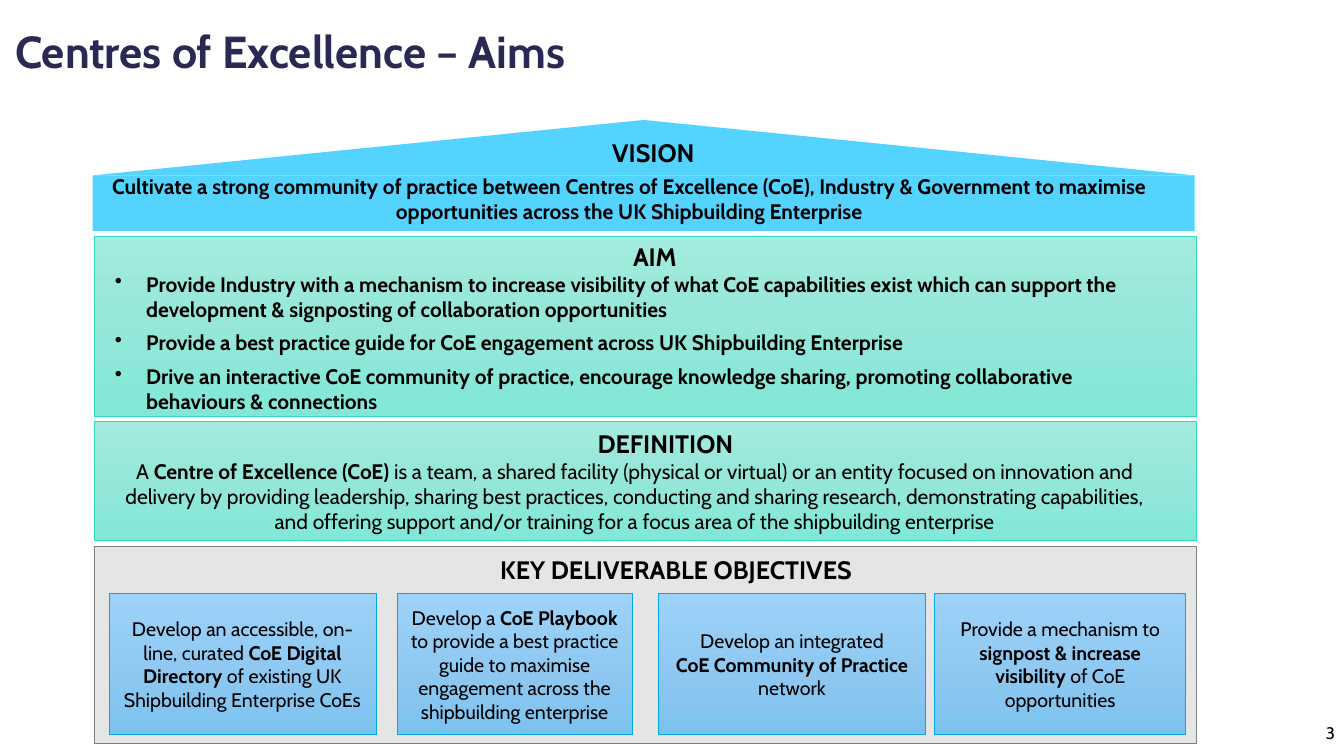
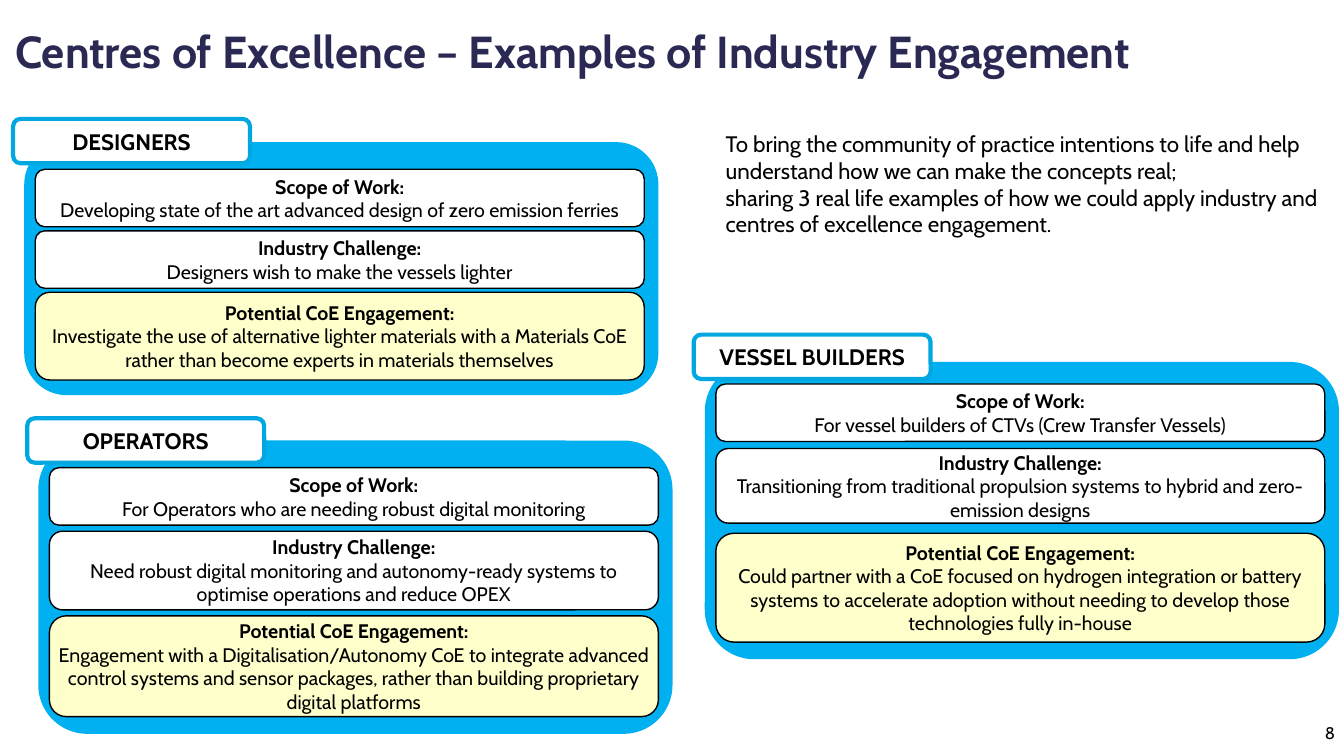
import copy

import pptx
import pptx.dml.color
import pptx.enum.shapes
import pptx.enum.text
import pptx.oxml
import pptx.oxml.ns
import pptx.util

Inches = pptx.util.Inches
Pt = pptx.util.Pt
RGB = pptx.dml.color.RGBColor.from_string
SHAPE = pptx.enum.shapes.MSO_SHAPE
ALIGN = pptx.enum.text.PP_ALIGN
ANCHOR = pptx.enum.text.MSO_ANCHOR

FONT = "Cabin"
COLORS = {
    "title": "2A2953",
    "text": "000000",
    "roof": "54D3FF",
    "green_line": "2ED9C3",
    "grey": "E5E5E5",
    "grey_line": "7F7F7F",
    "blue_line": "00A7E1",
    "frame": "00B0F0",
    "white": "FFFFFF",
    "yellow": "FFFFCC",
}
GREEN_GRADIENT = ["A3EBDF", "95E7D9", "81E8D7"]
BLUE_GRADIENT = ["9DD3FA", "90C9F1", "7CC2F0"]


def add_panel(shapes, kind, at, fill, line=None, line_width=0.5):
    """Add a preset shape; a list as fill is a three-stop gradient from top to bottom."""
    panel = shapes.add_shape(kind, *map(Inches, at))
    panel.shadow.inherit = False
    if isinstance(fill, list):
        panel.fill.gradient()
        panel.fill.gradient_angle = 270
        stop_list = panel._element.spPr.find(".//" + pptx.oxml.ns.qn("a:gsLst"))
        stop_list.insert(1, copy.deepcopy(stop_list[0]))
        for stop, position, color in zip(panel.fill.gradient_stops, (0, 0.5, 1), fill):
            stop.position = position
            stop.color.rgb = RGB(color)
    else:
        panel.fill.solid()
        panel.fill.fore_color.rgb = RGB(fill)
    if line:
        panel.line.color.rgb = RGB(line)
        panel.line.width = Pt(line_width)
    else:
        panel.line.fill.background()
    return panel


def write(shape, paragraphs, size, align=ALIGN.CENTER, anchor=ANCHOR.MIDDLE,
          flush=False, color="text"):
    """Fill a shape with paragraphs, each a list of (text, bold) runs; "\\n" breaks the line."""
    frame = shape.text_frame
    frame.word_wrap = True
    frame.vertical_anchor = anchor
    if flush:
        frame.margin_left = frame.margin_right = 0
        frame.margin_top = frame.margin_bottom = 0
    for index, runs in enumerate(paragraphs):
        paragraph = frame.add_paragraph() if index else frame.paragraphs[0]
        paragraph.alignment = align
        for text, bold in runs:
            for number, part in enumerate(text.split("\n")):
                if number:
                    paragraph.add_line_break()
                if part:
                    run = paragraph.add_run()
                    run.text = part
                    run.font.name = FONT
                    run.font.size = Pt(size)
                    run.font.bold = bold
                    run.font.color.rgb = RGB(COLORS[color])
    return frame


deck = pptx.Presentation()
deck.slide_width = Inches(13.33)
deck.slide_height = Inches(7.5)

# Title and page number on every slide
pages = []
for title, number in [
    ("Centres of Excellence – Aims", "3"),
    ("Centres of Excellence – Examples of Industry Engagement", "8"),
]:
    shapes = deck.slides.add_slide(deck.slide_layouts[6]).shapes
    heading = shapes.add_textbox(*map(Inches, (0.15, 0.05, 12.23, 0.98)))
    frame = write(heading, [[(title, True)]], 32, ALIGN.LEFT, flush=True, color="title")
    frame.paragraphs[0].line_spacing = 0.9
    page_number = shapes.add_textbox(*map(Inches, (12.83, 7.07, 0.51, 0.4)))
    write(page_number, [[(number, False)]], 12, ALIGN.RIGHT)
    pages.append(shapes)
aims, examples = pages

# Aims: the house, from roof to foundation
add_panel(aims, SHAPE.ISOSCELES_TRIANGLE, (0.92, 1.19, 10.93, 0.55), COLORS["roof"])
add_panel(aims, SHAPE.RECTANGLE, (0.92, 1.74, 10.93, 0.55), COLORS["roof"])
for top, height, fill, line in [
    (2.34, 1.79, GREEN_GRADIENT, "green_line"),
    (4.18, 1.18, GREEN_GRADIENT, "green_line"),
    (5.42, 1.96, COLORS["grey"], "grey_line"),
]:
    add_panel(aims, SHAPE.RECTANGLE, (0.94, top, 10.93, height), fill, COLORS[line])

for section, left, top, width in [
    ("VISION", 5.69, 1.31, 1.58),
    ("AIM", 6.05, 2.34, 0.89),
    ("DEFINITION", 5.48, 4.2, 2.24),
    ("KEY DELIVERABLE OBJECTIVES", 4.14, 5.45, 5.13),
]:
    heading = aims.add_textbox(*map(Inches, (left, top, width, 0.4)))
    write(heading, [[(section, True)]], 18, anchor=ANCHOR.TOP)

vision = aims.add_textbox(*map(Inches, (1.08, 1.72, 10.32, 0.67)))
write(vision, [[(
    "Cultivate a strong community of practice between Centres of Excellence (CoE), "
    "Industry & Government to maximise opportunities across the UK Shipbuilding Enterprise",
    True)]], 15, anchor=ANCHOR.TOP, flush=True)

aim_points = [
    "Provide Industry with a mechanism to increase visibility of what CoE capabilities exist "
    "which can support the development & signposting of collaboration opportunities",
    "Provide a best practice guide for CoE engagement across UK Shipbuilding Enterprise",
    "Drive an interactive CoE community of practice, encourage knowledge sharing, "
    "promoting collaborative behaviours & connections",
]
aim = aims.add_textbox(*map(Inches, (1.14, 2.69, 10.52, 1.6)))
frame = write(aim, [[(point, True)] for point in aim_points], 15, ALIGN.LEFT, ANCHOR.TOP, True)
for index, paragraph in enumerate(frame.paragraphs):
    properties = paragraph._p.get_or_add_pPr()
    properties.set("marL", str(Inches(0.31)))
    properties.set("indent", str(Inches(-0.31)))
    bullet = pptx.oxml.parse_xml(
        f'<a:buChar {pptx.oxml.ns.nsdecls("a")} char="•"/>')
    properties.append(bullet)
    paragraph.space_after = Pt(3)
    if index:
        paragraph.space_before = Pt(3)

definition = aims.add_textbox(*map(Inches, (0.96, 4.5, 10.67, 0.86)))
write(definition, [[
    ("A ", False),
    ("Centre of Excellence (CoE) ", True),
    ("is a team, a shared facility (physical or virtual) or an entity focused on innovation "
     "and delivery by providing leadership, sharing best practices, conducting and sharing "
     "research, demonstrating capabilities,\nand offering support and/or training for a focus "
     "area of the shipbuilding enterprise", False),
]], 15, anchor=ANCHOR.TOP)

for left, width, objective in [
    (1.08, 2.65, [[("Develop an accessible, on-line, curated ", False),
                   ("CoE Digital Directory ", True),
                   ("of existing UK Shipbuilding Enterprise CoEs", False)]]),
    (3.94, 2.33, [[("Develop a ", False), ("CoE Playbook", True)],
                  [("to provide a best practice guide to maximise engagement across "
                    "the shipbuilding enterprise", False)]]),
    (6.53, 2.65, [[("Develop an integrated\n", False),
                   ("CoE Community of Practice ", True),
                   ("network", False)]]),
    (9.27, 2.49, [[("Provide a mechanism to ", False),
                   ("signpost & increase visibility ", True),
                   ("of CoE opportunities", False)]]),
]:
    box = add_panel(aims, SHAPE.RECTANGLE, (left, 5.89, width, 1.4),
                    BLUE_GRADIENT, COLORS["blue_line"])
    write(box, objective, 14)

# Examples: one group per sector, with (top, height, text) for each card
card_heads = [
    ("Scope of Work:", "white"),
    ("Industry Challenge:", "white"),
    ("Potential CoE Engagement:", "yellow"),
]
sectors = [
    ("DESIGNERS", 0.24, 1.41, 2.51, 1.18, [
        (1.68, 0.57, "Developing state of the art advanced design of zero emission ferries"),
        (2.29, 0.57, "Designers wish to make the vessels lighter"),
        (2.9, 0.87, "Investigate the use of alternative lighter materials with a Materials CoE "
                    "rather than become experts in materials themselves"),
    ]),
    ("VESSEL BUILDERS", 6.99, 3.59, 2.95, 3.32, [
        (3.81, 0.57, "For vessel builders of CTVs (Crew Transfer Vessels)"),
        (4.45, 0.74, "Transitioning from traditional propulsion systems to hybrid and "
                     "zero-emission designs"),
        (5.29, 1.08, "Could partner with a CoE focused on hydrogen integration or battery "
                     "systems to accelerate adoption without needing to develop those "
                     "technologies fully in-house"),
    ]),
    ("OPERATORS", 0.38, 4.37, 2.91, 4.15, [
        (4.64, 0.57, "For Operators who are needing robust digital monitoring"),
        (5.27, 0.78, "Need robust digital monitoring and autonomy-ready systems to optimise "
                     "operations and reduce OPEX"),
        (6.11, 1, "Engagement with a Digitalisation/Autonomy CoE to integrate advanced control "
                  "systems and sensor packages, rather than building proprietary digital "
                  "platforms"),
    ]),
]
for sector, left, top, height, label_top, cards in sectors:
    group = examples.add_group_shape().shapes
    add_panel(group, SHAPE.ROUNDED_RECTANGLE, (left, top, 6.29, height), COLORS["frame"])
    label = add_panel(group, SHAPE.ROUNDED_RECTANGLE, (left - 0.11, label_top, 2.35, 0.44),
                      COLORS["white"], COLORS["blue_line"], 3)
    write(label, [[(sector, True)]], 16)
    for (head, fill), (card_top, card_height, text) in zip(card_heads, cards):
        card = add_panel(group, SHAPE.ROUNDED_RECTANGLE,
                         (left + 0.11, card_top, 6.04, card_height),
                         COLORS[fill], COLORS["text"], 1)
        write(card, [[(head, True)], [(text, False)]], 14, flush=True)

introduction = examples.add_textbox(*map(Inches, (7.1, 1.24, 6.1, 1.18)))
write(introduction, [
    [("To bring the community of practice intentions to life and help understand how we can "
      "make the concepts real;", False)],
    [("sharing 3 real life examples of how we could apply industry and centres of excellence "
      "engagement.", False)],
], 16, ALIGN.LEFT, ANCHOR.TOP)

deck.save("out.pptx")
